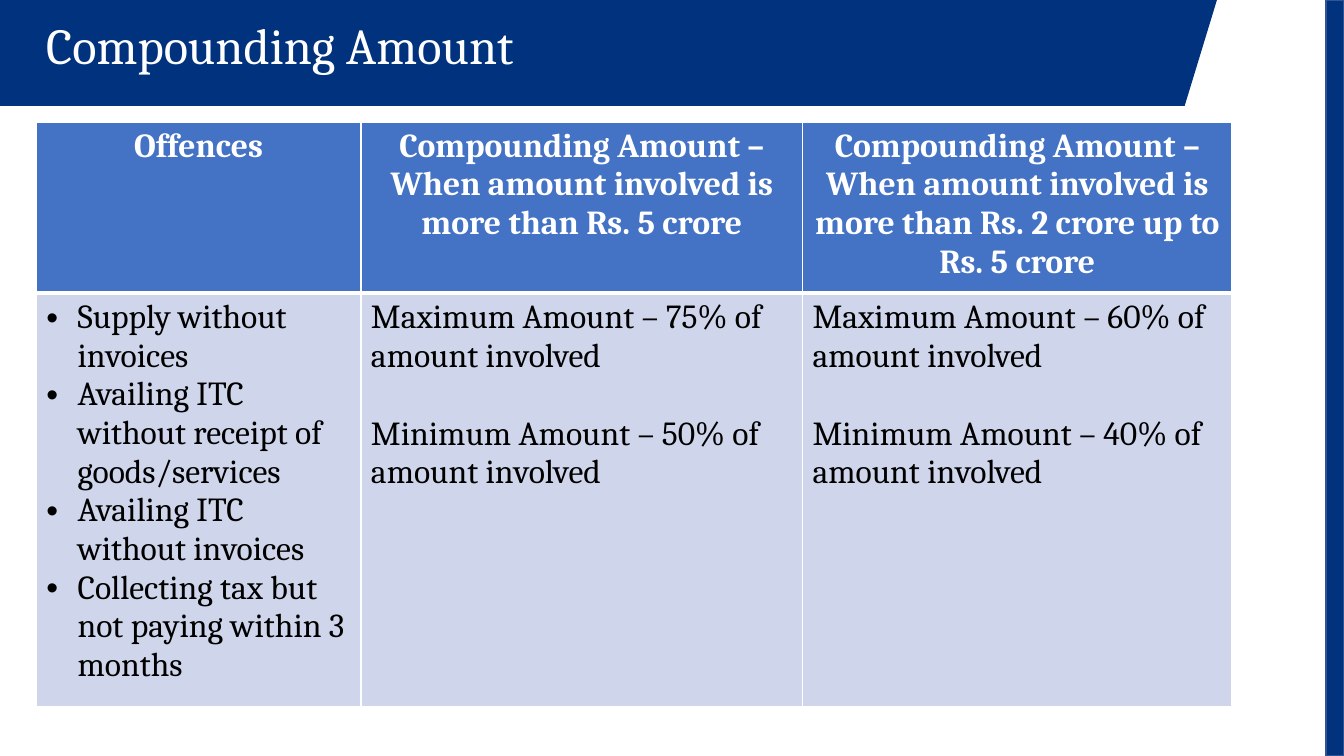
"""Build the slide on compounding amounts for tax offences."""
from lxml import etree
from pptx import Presentation
from pptx.dml.color import RGBColor
from pptx.enum.shapes import MSO_SHAPE
from pptx.enum.text import MSO_ANCHOR, PP_ALIGN
from pptx.oxml.ns import qn
from pptx.util import Inches, Pt

RECTANGLE = MSO_SHAPE.RECTANGLE
MIDDLE = MSO_ANCHOR.MIDDLE
LEFT, CENTER = PP_ALIGN.LEFT, PP_ALIGN.CENTER

NAVY, NAVY_EDGE = "00327D", "325491"
HEADER_BLUE, BODY_BLUE = "4472C4", "CFD5EA"
WHITE, BLACK = "FFFFFF", "000000"

HEADINGS = [
    "Offences",
    "Compounding Amount – When amount involved is more than Rs. 5 crore",
    "Compounding Amount – When amount involved is more than Rs. 2 crore up to Rs. 5 crore",
]
OFFENCES = [
    "Supply without invoices",
    "Availing ITC without receipt of goods/services",
    "Availing ITC without invoices",
    "Collecting tax but not paying within 3 months",
]
LIMITS = [(75, 50), (60, 40)]


def rgb(value):
    """Return the colour for a hex string."""
    return RGBColor.from_string(value)


def write(paragraph, text, font="Cambria", size=24, color=BLACK, bold=False,
          align=LEFT, before=0, spacing=1.0, bullet=False):
    """Put formatted text into a paragraph."""
    paragraph.alignment = align
    paragraph.space_before = Pt(before)
    paragraph.line_spacing = spacing
    run = paragraph.add_run()
    run.text = text
    run.font.name = font
    run.font.size = Pt(size)
    run.font.bold = bold
    run.font.color.rgb = rgb(color)
    if bullet:
        properties = paragraph._p.get_or_add_pPr()
        properties.set("marL", str(Inches(0.31)))
        properties.set("indent", str(Inches(-0.31)))
        etree.SubElement(properties, qn("a:buFont")).set("typeface", "Arial")
        etree.SubElement(properties, qn("a:buChar")).set("char", "•")


class SlideBuilder:
    """Draw styled elements on one slide."""

    def __init__(self, slide):
        """Keep the slide to draw on."""
        self.slide = slide

    def paint(self, shape, fill, line=None):
        """Set the fill and outline of a shape."""
        shape.shadow.inherit = False
        shape.fill.solid()
        shape.fill.fore_color.rgb = rgb(fill)
        if line:
            shape.line.color.rgb = rgb(line)
            shape.line.width = Pt(1)
        else:
            shape.line.fill.background()

    def outline(self, points, fill):
        """Draw a closed polygon."""
        corners = [(Inches(x), Inches(y)) for x, y in points]
        builder = self.slide.shapes.build_freeform(*corners[0])
        builder.add_line_segments(corners[1:], close=True)
        self.paint(builder.convert_to_shape(), fill)

    def bar(self, left, top, width, height, fill, line):
        """Draw a rectangle."""
        box = map(Inches, (left, top, width, height))
        self.paint(self.slide.shapes.add_shape(RECTANGLE, *box), fill, line)

    def text(self, left, top, width, height, text, **style):
        """Add a line of text, centred vertically."""
        box = map(Inches, (left, top, width, height))
        frame = self.slide.shapes.add_textbox(*box).text_frame
        frame.word_wrap = True
        frame.vertical_anchor = MIDDLE
        write(frame.paragraphs[0], text, **style)

    def table(self, left, top, columns, rows):
        """Add an empty table with the given column widths and row heights."""
        box = map(Inches, (left, top, sum(columns), sum(rows)))
        table = self.slide.shapes.add_table(len(rows), len(columns), *box).table
        for column, width in zip(table.columns, columns):
            column.width = Inches(width)
        for row, height in zip(table.rows, rows):
            row.height = Inches(height)
        return table

    def cell(self, cell, fill, borders, paragraphs):
        """Fill, border and write one table cell."""
        properties = cell._tc.get_or_add_tcPr()
        for side, width in borders.items():
            edge = etree.SubElement(properties, qn(f"a:ln{side}"), w=str(Pt(width)))
            solid = etree.SubElement(edge, qn("a:solidFill"))
            etree.SubElement(solid, qn("a:srgbClr")).set("val", WHITE)
        cell.fill.solid()
        cell.fill.fore_color.rgb = rgb(fill)
        frame = cell.text_frame
        for index, (text, style) in enumerate(paragraphs):
            paragraph = frame.add_paragraph() if index else frame.paragraphs[0]
            write(paragraph, text, **style)


def main():
    """Build and save the slide."""
    deck = Presentation()
    deck.slide_width, deck.slide_height = Inches(13.33), Inches(7.5)
    page = SlideBuilder(deck.slides.add_slide(deck.slide_layouts[6]))

    page.outline([(0, 0), (0, 1.05), (11.75, 1.05), (12.07, 0)], NAVY)
    page.bar(13.15, 0, 0.18, 7.5, NAVY, NAVY_EDGE)
    page.text(0.36, 0.16, 9.19, 0.64, "Compounding Amount",
              size=36, color=WHITE, spacing=0.9)

    amounts = page.table(0.36, 1.21, [3.22, 4.38, 4.26], [1.63, 3.93])
    heading_style = {"color": WHITE, "bold": True, "align": CENTER}
    header_borders = {"L": 1, "R": 1, "T": 1, "B": 3}
    body_borders = {"L": 1, "R": 1, "T": 3, "B": 1}
    details = [[(offence, {"bullet": True}) for offence in OFFENCES]]
    for maximum, minimum in LIMITS:
        details.append([
            (f"Maximum Amount – {maximum}% of amount involved", {}),
            (f"Minimum Amount – {minimum}% of amount involved", {"before": 28}),
        ])
    for column, (heading, detail) in enumerate(zip(HEADINGS, details)):
        page.cell(amounts.cell(0, column), HEADER_BLUE, header_borders,
                  [(heading, heading_style)])
        page.cell(amounts.cell(1, column), BODY_BLUE, body_borders, detail)

    deck.save("out.pptx")


if __name__ == "__main__":
    main()
